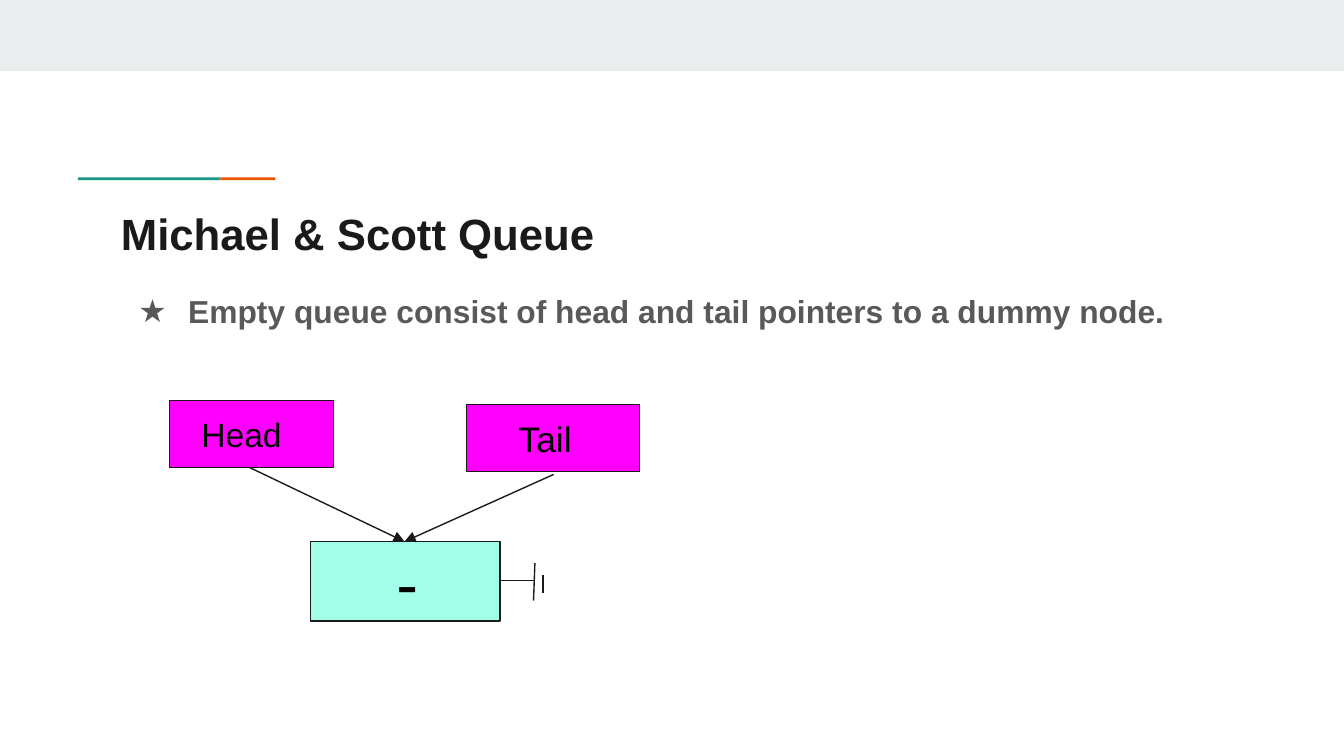
from lxml import etree
from pptx import Presentation
from pptx.dml.color import RGBColor
from pptx.enum.shapes import MSO_CONNECTOR, MSO_SHAPE
from pptx.enum.text import MSO_ANCHOR, MSO_AUTO_SIZE, PP_ALIGN
from pptx.oxml.ns import qn
from pptx.util import Inches, Pt

RECT, STRAIGHT = MSO_SHAPE.RECTANGLE, MSO_CONNECTOR.STRAIGHT
TOP, MIDDLE = MSO_ANCHOR.TOP, MSO_ANCHOR.MIDDLE
LEFT, NO_FIT = PP_ALIGN.LEFT, MSO_AUTO_SIZE.NONE
W = 10
H = W * 9 / 16
COLORS = {
    "band": "E9EDEE", "orange": "EB5600", "green": "1A9988", "ink": "1A1A1A",
    "gray": "595959", "pointer": "FF00FF", "node": "A2FFE8", "black": "000000",
}


def color(name):
    return RGBColor.from_string(COLORS[name])


def write(s, text, size, fill="black", bold=False, anchor=MIDDLE,
          margin=0, indent=0, spacing=1, bullet=None):
    tf = s.text_frame
    tf.word_wrap, tf.auto_size, tf.vertical_anchor = True, NO_FIT, anchor
    tf.margin_left = tf.margin_right = tf.margin_top = tf.margin_bottom = Inches(0.1)
    p = tf.paragraphs[0]
    p.alignment, p.line_spacing = LEFT, spacing
    p.space_before = p.space_after = Pt(0)
    pPr = p._p.get_or_add_pPr()
    pPr.set("marL", str(Inches(margin)))
    pPr.set("indent", str(Inches(indent)))
    if bullet:
        clr = etree.SubElement(pPr, qn("a:buClr"))
        etree.SubElement(clr, qn("a:srgbClr"), val=COLORS[fill])
        etree.SubElement(pPr, qn("a:buChar"), char=bullet)
    r = p.add_run()
    r.text = text
    r.font.name, r.font.size, r.font.bold = "Arial", Pt(size), bold
    r.font.color.rgb = color(fill)


prs = Presentation()
prs.slide_width, prs.slide_height = Inches(W), Inches(H)
slide = prs.slides.add_slide(prs.slide_layouts[1])
shapes = slide.shapes

# Top band and two-colour accent rule
for x, y, w, h, fill in [
    (0, 0, W, 0.53, "band"),
    (0.58, 1.32, 1.06, 0.02, "green"),
    (1.64, 1.32, 0.41, 0.02, "orange"),
]:
    s = shapes.add_shape(RECT, Inches(x), Inches(y), Inches(w), Inches(h))
    s.shadow.inherit = False
    s.fill.solid()
    s.fill.fore_color.rgb = color(fill)
    s.line.fill.background()

# Title and bullet
title, body = shapes.title, slide.placeholders[1]
for s, y, h in [(title, 1.44, 0.59), (body, 2.03, 2.75)]:
    s.left, s.top, s.width, s.height = Inches(0.8), Inches(y), Inches(8.41), Inches(h)
write(title, "Michael & Scott Queue", 23.4, fill="ink", bold=True, anchor=TOP)
write(body, "Empty queue consist of head and tail pointers to a dummy node.", 17,
      fill="gray", bold=True, anchor=TOP, margin=0.5, indent=-0.37,
      spacing=1.15, bullet="★")

# Head and tail pointers, dummy node
for text, x, y, w, h, fill, size, margin in [
    ("Head", 1.26, 2.98, 1.22, 0.5, "pointer", 18, 0.14),
    ("Tail", 3.47, 3.01, 1.29, 0.5, "pointer", 19, 0.29),
    ("-", 2.31, 4.03, 1.41, 0.59, "node", 35, 0.54),
]:
    s = shapes.add_shape(RECT, Inches(x), Inches(y), Inches(w), Inches(h))
    s.shadow.inherit = False
    s.fill.solid()
    s.fill.fore_color.rgb = color(fill)
    s.line.color.rgb, s.line.width = color("ink"), Pt(0.75)
    write(s, text, size, margin=margin)

# Pointer arrows, then the null-terminator lines
for x1, y1, x2, y2, arrow in [
    (1.86, 3.48, 3.01, 4.03, True),
    (4.12, 3.53, 3.01, 4.03, True),
    (3.72, 4.32, 3.97, 4.32, False),
    (3.97, 4.47, 3.98, 4.19, False),
    (4.04, 4.28, 4.04, 4.41, False),
]:
    s = shapes.add_connector(STRAIGHT, Inches(x1), Inches(y1), Inches(x2), Inches(y2))
    s.line.color.rgb, s.line.width = color("ink"), Pt(0.75)
    if arrow:
        etree.SubElement(s.line._get_or_add_ln(), qn("a:tailEnd"), type="triangle")
    etree.SubElement(s._element.spPr, qn("a:effectLst"))

prs.save("out.pptx")
